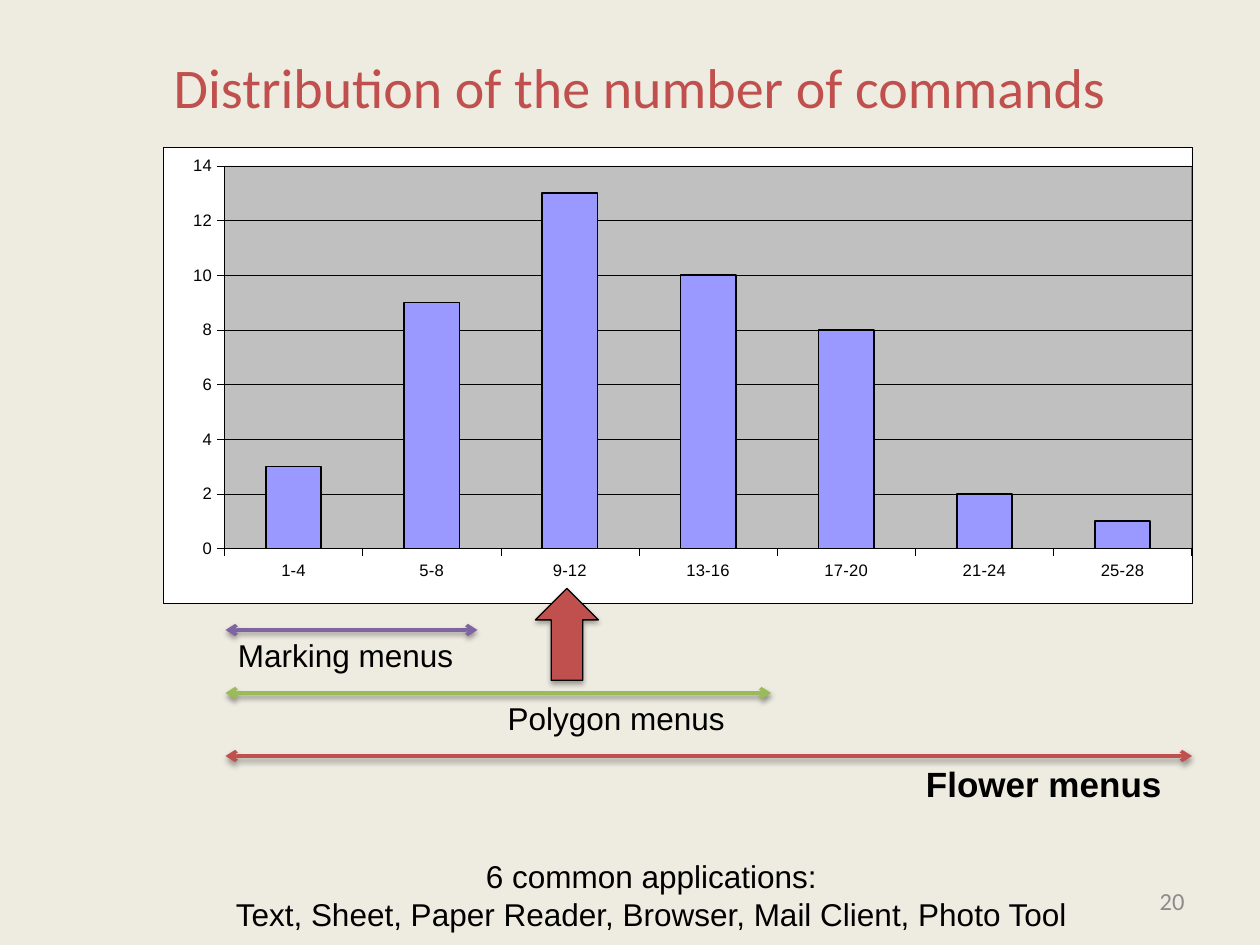
"""Build a slide showing how the number of commands is distributed."""
from pptx import Presentation
from pptx import util as u
from pptx.chart import data as cd
from pptx.dml.color import RGBColor
from pptx.enum import chart as ch, shapes, text
from pptx.oxml import ns, parse_xml

BLACK = RGBColor(0x00, 0x00, 0x00)
WHITE = RGBColor(0xFF, 0xFF, 0xFF)
CREAM = RGBColor(0xEE, 0xEC, 0xE1)
SILVER = RGBColor(0xC0, 0xC0, 0xC0)
GRAY = RGBColor(0x8C, 0x8C, 0x8C)
EDGE = RGBColor(0x80, 0x80, 0x80)
RED = RGBColor(0xC0, 0x50, 0x4D)
GREEN = RGBColor(0x9B, 0xBB, 0x59)
PURPLE = RGBColor(0x80, 0x64, 0xA2)
BLUE = RGBColor(0x99, 0x99, 0xFF)

LEFT, CENTER, RIGHT = (text.PP_ALIGN.LEFT, text.PP_ALIGN.CENTER,
                       text.PP_ALIGN.RIGHT)


class Deck:
    def __init__(self, font="Arial", size=18):
        self.font, self.size = font, size
        self.prs = Presentation()
        self.prs.slide_width = u.Inches(10)
        self.prs.slide_height = u.Inches(7.5)
        self.slide = self.prs.slides.add_slide(self.prs.slide_layouts[6])
        fill = self.slide.background.fill
        fill.solid()
        fill.fore_color.rgb = CREAM

    def label(self, words, box, size=None, font=None, color=BLACK,
              bold=False, align=LEFT, wrap=True, middle=False):
        shape = self.slide.shapes.add_textbox(*map(u.Inches, box))
        frame = shape.text_frame
        frame.text = words
        frame.word_wrap = wrap
        if middle:
            frame.vertical_anchor = text.MSO_ANCHOR.MIDDLE
        for para in frame.paragraphs:
            para.alignment = align
            for run in para.runs:
                run.font.name = font or self.font
                run.font.size = u.Pt(size or self.size)
                run.font.bold = bold
                run.font.color.rgb = color

    def shade(self, shape, alpha, dist):
        shape.element.spPr.append(parse_xml(
            f'<a:effectLst {ns.nsdecls("a")}><a:outerShdw '
            f'blurRad="{u.Pt(3.1)}" dist="{u.Pt(dist)}" dir="5400000" '
            f'rotWithShape="0"><a:srgbClr val="{BLACK}">'
            f'<a:alpha val="{alpha * 1000}"/></a:srgbClr>'
            '</a:outerShdw></a:effectLst>'))

    def span(self, left, right, top, color):
        line = self.slide.shapes.add_connector(
            shapes.MSO_CONNECTOR.STRAIGHT,
            *map(u.Inches, (left, top, right, top)))
        line.line.color.rgb = color
        line.line.width = u.Pt(2)
        stroke = line.element.spPr.find(ns.qn("a:ln"))
        for end in ("headEnd", "tailEnd"):
            stroke.append(parse_xml(
                f'<a:{end} {ns.nsdecls("a")} type="arrow"/>'))
        self.shade(line, 38, 1.6)

    def arrow(self, box, color):
        shape = self.slide.shapes.add_shape(
            shapes.MSO_SHAPE.UP_ARROW, *map(u.Inches, box))
        shape.fill.solid()
        shape.fill.fore_color.rgb = color
        shape.line.color.rgb = BLACK
        shape.line.width = u.Pt(0.75)
        self.shade(shape, 35, 1.8)

    def panel(self, fill, edge):
        return parse_xml(
            f'<c:spPr {ns.nsdecls("c", "a")}><a:solidFill>'
            f'<a:srgbClr val="{fill}"/></a:solidFill>'
            f'<a:ln w="{u.Pt(0.25)}"><a:solidFill><a:srgbClr val="{edge}"/>'
            '</a:solidFill></a:ln></c:spPr>')

    def bars(self, names, vals, box, inner):
        data = cd.CategoryChartData()
        data.categories = names
        data.add_series("Series 1", vals)
        chart = self.slide.shapes.add_chart(
            ch.XL_CHART_TYPE.COLUMN_CLUSTERED,
            *map(u.Inches, box), data).chart
        chart.has_legend = chart.has_title = False
        chart.font.name = self.font
        chart.font.size = u.Pt(9.5)
        chart.font.color.rgb = BLACK
        plot = chart.plots[0]
        plot.gap_width = 150
        plot.vary_by_categories = False
        bar = plot.series[0].format
        bar.fill.solid()
        bar.fill.fore_color.rgb = BLUE
        axis = chart.value_axis
        axis.minimum_scale, axis.maximum_scale, axis.major_unit = 0, 14, 2
        axis.has_major_gridlines = True
        lines = [(bar.line, 1), (axis.major_gridlines.format.line, 0.25)]
        for side in (axis, chart.category_axis):
            side.major_tick_mark = ch.XL_TICK_MARK.OUTSIDE
            lines.append((side.format.line, 0.25))
        for line, width in lines:
            line.color.rgb = BLACK
            line.width = u.Pt(width)
        self.frame(chart, inner)

    def frame(self, chart, inner):
        root = chart.element
        root.find(ns.qn("c:chart")).addnext(self.panel(WHITE, BLACK))
        area = root.find(".//" + ns.qn("c:plotArea"))
        for old in area.findall(ns.qn("c:layout")):
            area.remove(old)
        modes = "".join(f'<c:{k}Mode val="edge"/>' for k in "xy")
        sizes = "".join(f'<c:{k} val="{v}"/>' for k, v in zip("xywh", inner))
        area.insert(0, parse_xml(
            f'<c:layout {ns.nsdecls("c")}><c:manualLayout>'
            f'<c:layoutTarget val="inner"/>{modes}{sizes}'
            '</c:manualLayout></c:layout>'))
        area.append(self.panel(SILVER, EDGE))


def main():
    deck = Deck()
    names = [f"{n}-{n + 3}" for n in range(1, 28, 4)]
    deck.bars(names, (3, 9, 13, 10, 8, 2, 1), (1.29, 1.17, 8.17, 3.62),
              (0.06, 0.04, 0.94, 0.84))
    menus = (
        ("Marking menus", 3.79, PURPLE, 1.79, 1.93, 18, False),
        ("Polygon menus", 6.12, GREEN, 3.93, 1.94, 18, False),
        ("Flower menus", 9.46, RED, 7.25, 2.09, 20, True),
    )
    for i, (name, end, color, left, width, size, bold) in enumerate(menus):
        top = 5 + i * 0.5
        deck.span(1.79, end, top, color)
        deck.label(name, (left, top, width, 0.4), size, bold=bold, wrap=False)
    deck.label("6 common applications:\nText, Sheet, Paper Reader, Browser, "
               "Mail Client, Photo Tool", (0.42, 6.75, 9.5, 0.71),
               align=CENTER)
    deck.label("Distribution of the number of commands",
               (0.33, 0.2, 9.5, 0.97), 32, "Calibri", RED,
               align=CENTER, middle=True)
    deck.arrow((4.25, 4.67, 0.5, 0.73), RED)
    deck.label("20", (7.17, 6.95, 2.33, 0.4), 14, "Calibri", GRAY,
               align=RIGHT, middle=True)
    deck.prs.save("out.pptx")


if __name__ == "__main__":
    main()
